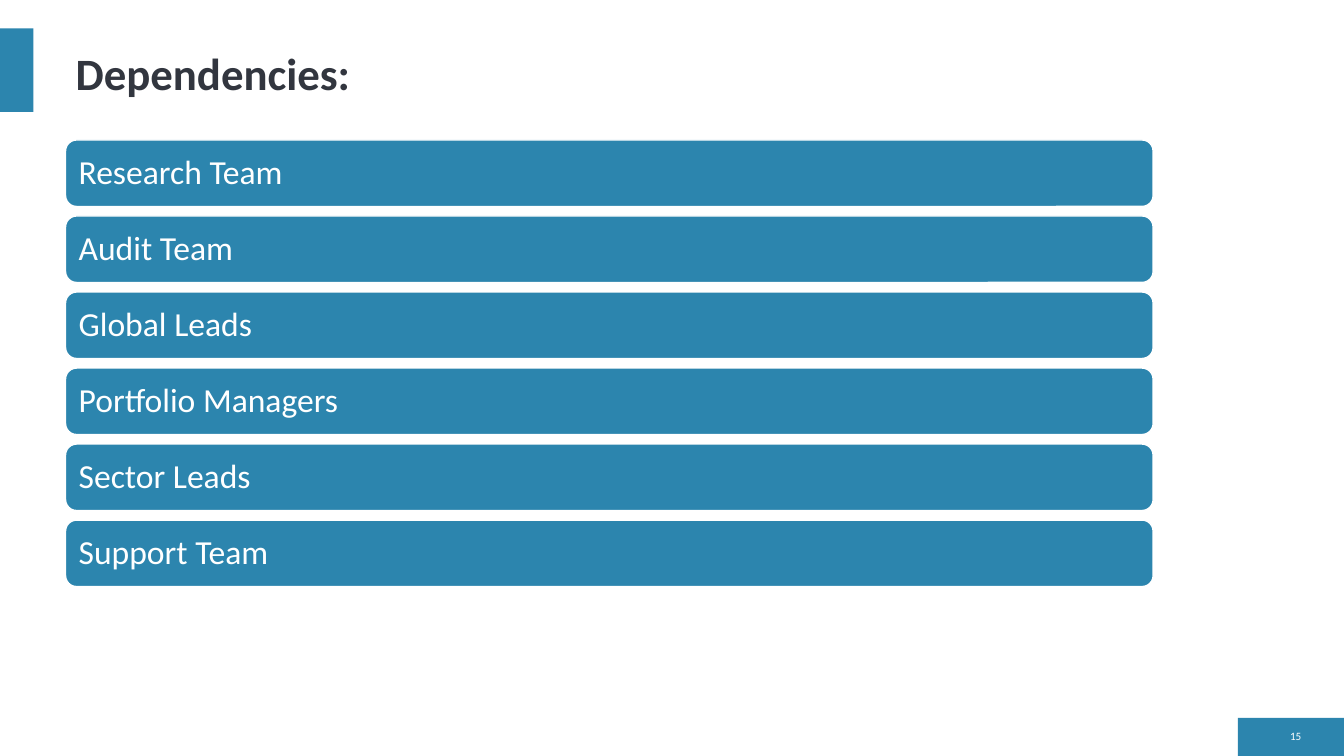
from pptx import Presentation
from pptx.dml.color import RGBColor
from pptx.enum.shapes import MSO_SHAPE
from pptx.enum.text import MSO_ANCHOR, PP_ALIGN
from pptx.util import Pt

BLUE = RGBColor(0x2C, 0x85, 0xAE)
DARK = RGBColor(0x32, 0x36, 0x3F)
WHITE = RGBColor(0xFF, 0xFF, 0xFF)
FONT = "Calibri"
TEAMS = ["Research Team", "Audit Team", "Global Leads",
         "Portfolio Managers", "Sector Leads", "Support Team"]
LEFT, TOP, WIDTH, HEIGHT, PITCH = 46.8, 100, 776.9, 47.5, 54.3


def write(shape, text, size, color, anchor=MSO_ANCHOR.MIDDLE,
          align=PP_ALIGN.LEFT, bold=False, after=0):
    """Put one styled line of text in a shape."""
    frame = shape.text_frame
    frame.text = text
    frame.word_wrap = True
    frame.vertical_anchor = anchor
    line = frame.paragraphs[0]
    line.alignment = align
    line.line_spacing = 0.9
    line.space_before = Pt(0)
    line.space_after = Pt(after)
    line.font.name = FONT
    line.font.size = Pt(size)
    line.font.bold = bold
    line.font.color.rgb = color


def add_block(slide, kind, left, top, width, height):
    """Add a flat blue shape without outline."""
    block = slide.shapes.add_shape(kind, Pt(left), Pt(top), Pt(width), Pt(height))
    block.shadow.inherit = False
    block.fill.solid()
    block.fill.fore_color.rgb = BLUE
    block.line.fill.background()
    return block


def add_bar(slide, row, team):
    """Add the rounded bar of one team."""
    bar = add_block(slide, MSO_SHAPE.ROUNDED_RECTANGLE,
                    LEFT, TOP + row * PITCH, WIDTH, HEIGHT)
    bar.line.color.rgb = WHITE
    bar.line.width = Pt(1)
    write(bar, team, 24, WHITE)


def set_title(slide, text):
    """Place and fill the title placeholder."""
    title = slide.shapes.title
    title.left, title.top = Pt(46.8), Pt(29.5)
    title.width, title.height = Pt(333.4), Pt(45.4)
    write(title, text, 32, DARK, MSO_ANCHOR.BOTTOM, bold=True)


def add_number(slide, text):
    """Add the page number in the corner."""
    box = slide.shapes.add_textbox(Pt(907.2), Pt(518.4), Pt(29.5), Pt(16.6))
    write(box, text, 8, WHITE, align=PP_ALIGN.RIGHT, after=6)


def main():
    """Build and save the slide."""
    deck = Presentation()
    deck.slide_width, deck.slide_height = Pt(960), Pt(540)
    slide = deck.slides.add_slide(deck.slide_layouts[5])
    add_block(slide, MSO_SHAPE.RECTANGLE, 884.2, 512.8, 75.8, 27.2)
    add_block(slide, MSO_SHAPE.RECTANGLE, 0, 20.2, 23.8, 59.8)
    set_title(slide, "Dependencies:")
    add_number(slide, "15")
    for row, team in enumerate(TEAMS):
        add_bar(slide, row, team)
    deck.save("out.pptx")


if __name__ == "__main__":
    main()
